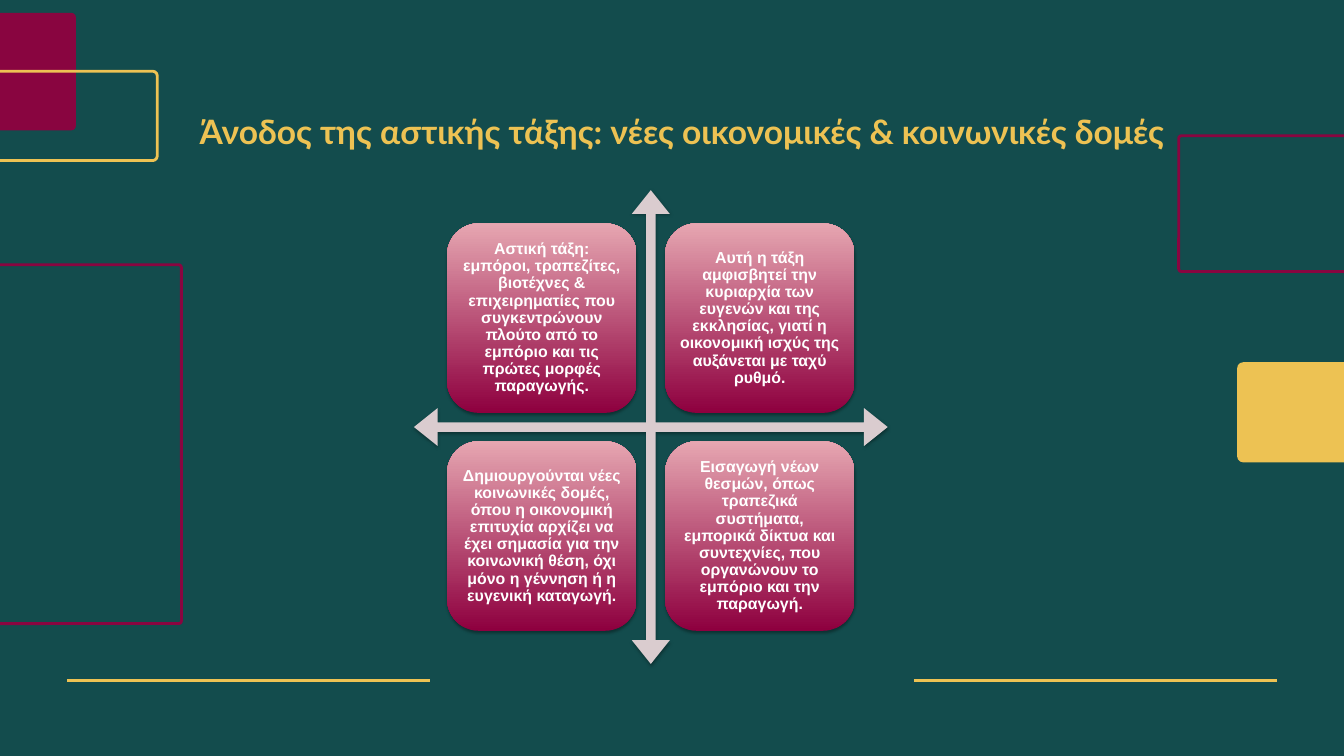
from dataclasses import dataclass
from itertools import product
from lxml.etree import SubElement
from pptx import Presentation
from pptx.dml.color import RGBColor
from pptx.enum.shapes import MSO_CONNECTOR, MSO_SHAPE
from pptx.enum.text import MSO_ANCHOR, PP_ALIGN
from pptx.oxml.ns import qn
from pptx.util import Inches, Pt


@dataclass(frozen=True)
class Theme:
    """Colours, fonts and type sizes of the slide."""
    back: str = "134C4D"
    gold: str = "EDC253"
    wine: str = "890540"
    deep: str = "8E003F"
    rose: str = "E6A6B1"
    mist: str = "DACCCF"
    white: str = "FFFFFF"
    head: str = "Lato"
    body: str = "Arial"
    big: int = 36
    small: int = 17
    frame: int = 3
    rule: int = 4


@dataclass(frozen=True)
class Box:
    """A region in columns and rows of the slide grid."""
    x: float
    y: float
    w: float
    h: float

    def inner(self, x, y, w, h):
        """Return the box at the given shares of this one."""
        return Box(self.x + x * self.w, self.y + y * self.h, w * self.w, h * self.h)

    def place(self):
        """Return left, top, width and height as slide lengths."""
        return (int(self.x * COL), int(self.y * ROW), int(self.w * COL), int(self.h * ROW))


THEME = Theme()
WIDE, HIGH = Inches(20), Inches(11.25)
COL, ROW = WIDE / 20, HIGH / 11.25

TITLE = "Άνοδος της αστικής τάξης: νέες οικονομικές & κοινωνικές δομές"
CARDS = (
    "Αστική τάξη: εμπόροι, τραπεζίτες, βιοτέχνες & επιχειρηματίες που "
    "συγκεντρώνουν πλούτο από το εμπόριο και τις πρώτες μορφές παραγωγής.",
    "Αυτή η τάξη αμφισβητεί την κυριαρχία των ευγενών και της εκκλησίας, "
    "γιατί η οικονομική ισχύς της αυξάνεται με ταχύ ρυθμό.",
    "Δημιουργούνται νέες κοινωνικές δομές, όπου η οικονομική επιτυχία αρχίζει "
    "να έχει σημασία για την κοινωνική θέση, όχι μόνο η γέννηση ή η ευγενική καταγωγή.",
    "Εισαγωγή νέων θεσμών, όπως τραπεζικά συστήματα, εμπορικά δίκτυα και "
    "συντεχνίες, που οργανώνουν το εμπόριο και την παραγωγή.",
)
PANELS = (
    (Box(-1.2, 3.94, 3.9, 5.34), 0.01, None, THEME.wine),
    (Box(18.41, 5.39, 2.45, 1.49), 0.06, THEME.gold, None),
    (Box(-1.73, 0.19, 2.86, 1.75), 0.04, THEME.wine, None),
    (Box(-0.83, 1.06, 3.17, 1.33), 0.05, None, THEME.gold),
    (Box(17.54, 2.02, 4.77, 2.02), 0.02, None, THEME.wine),
)


def write(shape, text, *, font, size, color, pad):
    """Set bold centred text in a shape."""
    frame = shape.text_frame
    frame.word_wrap = True
    frame.vertical_anchor = MSO_ANCHOR.MIDDLE
    frame.margin_left = frame.margin_right = Inches(pad[0])
    frame.margin_top = frame.margin_bottom = Inches(pad[1])
    para = frame.paragraphs[0]
    para.alignment = PP_ALIGN.CENTER
    para.line_spacing = 0.9
    run = para.add_run()
    run.text = text
    run.font.name = font
    run.font.size = Pt(size)
    run.font.bold = True
    run.font.color.rgb = RGBColor.from_string(color)


def draw(slide, kind, box, adjust=(), fill=None, line=None):
    """Add a flat preset shape."""
    shape = slide.shapes.add_shape(kind, *box.place())
    shape.shadow.inherit = False
    for spot, value in enumerate(adjust):
        shape.adjustments[spot] = value
    if fill:
        shape.fill.solid()
        shape.fill.fore_color.rgb = RGBColor.from_string(fill)
    else:
        shape.fill.background()
    if line:
        shape.line.color.rgb = RGBColor.from_string(line)
        shape.line.width = Pt(THEME.frame)
    else:
        shape.line.fill.background()
    return shape


def shade(shape):
    """Give a shape a soft shadow below it."""
    effects = shape._element.spPr.find(qn("a:effectLst"))
    cast = SubElement(effects, qn("a:outerShdw"), blurRad=str(Pt(3.1)), dist=str(Pt(1.8)),
                      dir="5400000", rotWithShape="0")
    tint = SubElement(cast, qn("a:srgbClr"), val="000000")
    SubElement(tint, qn("a:alpha"), val="35000")


def rule(slide, box):
    """Draw a gold rule along the top of a box."""
    x, y, w, _ = box.place()
    line = slide.shapes.add_connector(MSO_CONNECTOR.STRAIGHT, x, y, x + w, y)
    line.line.color.rgb = RGBColor.from_string(THEME.gold)
    line.line.width = Pt(THEME.rule)
    SubElement(line._element.spPr, qn("a:effectLst"))


def decor(slide, box):
    """Place the rules at the foot of the box and the edge panels."""
    for left in (0.68, 0.05):
        rule(slide, box.inner(left, 0.9, 0.27, 0))
    for panel, curve, fill, line in PANELS:
        draw(slide, MSO_SHAPE.ROUNDED_RECTANGLE, panel, (curve,), fill, line)


def title(slide, box):
    """Place the slide title."""
    shape = slide.shapes.add_textbox(*box.place())
    write(shape, TITLE, font=THEME.head, size=THEME.big, color=THEME.gold, pad=(0.1, 0.05))


def matrix(slide, box):
    """Place the crossed arrows and a card in each quarter."""
    shade(draw(slide, MSO_SHAPE.QUAD_ARROW, box, (0.02, 0.04, 0.05), THEME.mist))
    edge, size = 0.07, 0.4
    starts = (edge, 1 - edge - size)
    for (top, left), text in zip(product(starts, starts), CARDS):
        card = draw(slide, MSO_SHAPE.ROUNDED_RECTANGLE, box.inner(left, top, size, size))
        card.fill.gradient()
        card.fill.gradient_angle = 90
        for stop, color in zip(card.fill.gradient_stops, (THEME.deep, THEME.rose)):
            stop.color.rgb = RGBColor.from_string(color)
        shade(card)
        write(card, text, font=THEME.body, size=THEME.small, color=THEME.white, pad=(0.07, 0.07))


def main():
    """Build and save the slide."""
    deck = Presentation()
    deck.slide_width, deck.slide_height = WIDE, HIGH
    slide = deck.slides.add_slide(deck.slide_layouts[6])
    back = slide.background.fill
    back.solid()
    back.fore_color.rgb = RGBColor.from_string(THEME.back)
    decor(slide, Box(0, 0, 20, 11.25))
    title(slide, Box(1.2, 1.37, 17.9, 1.25))
    matrix(slide, Box(6.16, 2.83, 7.05, 7.05))
    deck.save("out.pptx")


if __name__ == "__main__":
    main()
